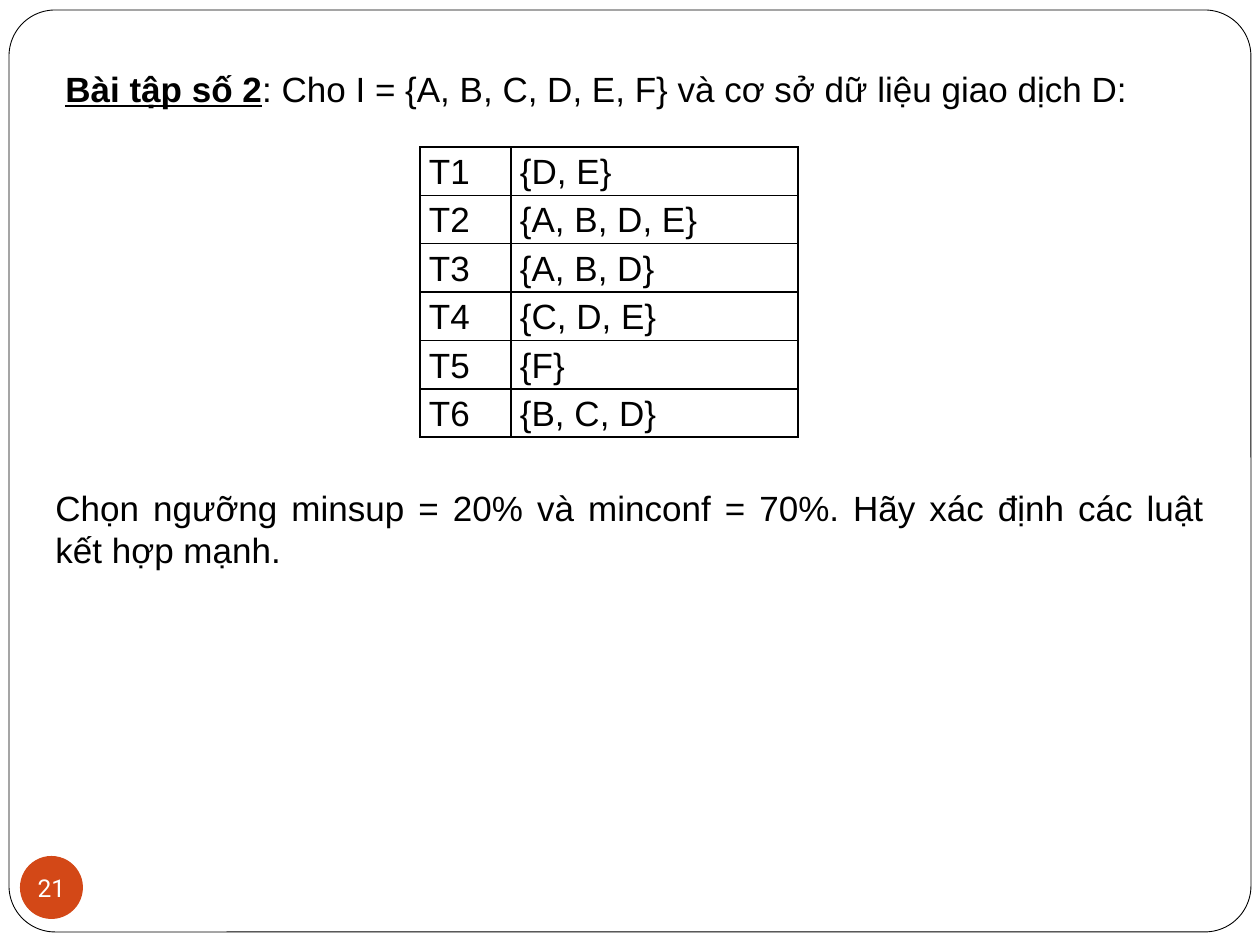
import pptx
import pptx.dml.color
import pptx.enum.shapes
import pptx.enum.text
import pptx.oxml
import pptx.oxml.ns
import pptx.util

SCALE = 914400 / 126  # EMU in one px
COLORS = {"paper": "FFFFFF", "ink": "000000", "badge": "D34817"}
ALIGN = pptx.enum.text.PP_ALIGN
SHAPE = pptx.enum.shapes.MSO_SHAPE
MIDDLE = pptx.enum.text.MSO_ANCHOR.MIDDLE

TRANSACTIONS = [
    ("T1", "{D, E}"),
    ("T2", "{A, B, D, E}"),
    ("T3", "{A, B, D}"),
    ("T4", "{C, D, E}"),
    ("T5", "{F}"),
    ("T6", "{B, C, D}"),
]


def px(length):
    return pptx.util.Emu(round(length * SCALE))


def rgb(name):
    return pptx.dml.color.RGBColor.from_string(COLORS[name])


def set_font(paragraph, size=20, name="Arial", color="ink"):
    font = paragraph.font
    font.size = pptx.util.Pt(size)
    font.name = name
    font.color.rgb = rgb(color)


def add_plain_shape(slide, kind, box, fill):
    shape = slide.shapes.add_shape(kind, *map(px, box))
    shape.shadow.inherit = False
    shape.fill.solid()
    shape.fill.fore_color.rgb = rgb(fill)
    return shape


def add_frame(slide, box):
    frame = add_plain_shape(slide, SHAPE.ROUNDED_RECTANGLE, box, "paper")
    frame.adjustments[0] = 0.05
    frame.line.color.rgb = rgb("ink")
    frame.line.width = pptx.util.Pt(0.5)


def add_page_badge(slide, box, number):
    badge = add_plain_shape(slide, SHAPE.OVAL, box, "badge")
    badge.line.fill.background()
    text = badge.text_frame
    text.margin_left = text.margin_right = text.margin_top = text.margin_bottom = 0
    text.word_wrap = False
    text.vertical_anchor = MIDDLE
    label = text.paragraphs[0]
    label.text = number
    label.alignment = ALIGN.CENTER
    set_font(label, 14, "Roboto", "paper")


def add_statement(slide, box, body, heading=""):
    text = slide.shapes.add_textbox(*map(px, box)).text_frame
    text.word_wrap = True
    text.vertical_anchor = MIDDLE
    statement = text.paragraphs[0]
    statement.alignment = ALIGN.JUSTIFY
    set_font(statement)
    if heading:
        title = statement.add_run()
        title.text = heading
        title.font.bold = title.font.underline = True
    statement.add_run().text = body


def add_borders(cell):
    properties = cell._tc.get_or_add_tcPr()
    for position, side in enumerate(("lnL", "lnR", "lnT", "lnB")):
        border = pptx.oxml.parse_xml(
            f'<a:{side} {pptx.oxml.ns.nsdecls("a")} w="12700"><a:solidFill>'
            f'<a:srgbClr val="{COLORS["ink"]}"/></a:solidFill></a:{side}>'
        )
        properties.insert(position, border)


def add_transactions(slide, box, id_width):
    left, top, width, height = box
    table = slide.shapes.add_table(len(TRANSACTIONS), 2, *map(px, box)).table
    table.first_row = table.horz_banding = False
    table.columns[0].width = px(id_width)
    table.columns[1].width = px(width - id_width)
    for row, values in enumerate(TRANSACTIONS):
        table.rows[row].height = px(height / len(TRANSACTIONS))
        for column, value in enumerate(values):
            cell = table.cell(row, column)
            cell.fill.background()
            cell.margin_left = cell.margin_right = px(9)
            cell.margin_top = cell.margin_bottom = 0
            entry = cell.text_frame.paragraphs[0]
            entry.text = value
            entry.line_spacing = 1.15
            set_font(entry)
            add_borders(cell)


def add_exercise_slide(deck):
    slide = deck.slides.add_slide(deck.slide_layouts[6])
    # Page frame and number
    add_frame(slide, (9, 10, 1242, 922))
    add_page_badge(slide, (20, 856, 63, 63), "21")
    # Exercise, its data and the question
    add_statement(
        slide, (53, 61, 1104, 55),
        ": Cho I = {A, B, C, D, E, F} và cơ sở dữ liệu giao dịch D:",
        heading="Bài tập số 2",
    )
    add_transactions(slide, (420, 147, 378, 290), id_width=91)
    add_statement(
        slide, (43, 480, 1174, 97),
        "Chọn ngưỡng minsup = 20% và minconf = 70%. "
        "Hãy xác định các luật kết hợp mạnh.",
    )


def main():
    deck = pptx.Presentation()
    deck.slide_width, deck.slide_height = px(1260), px(945)
    add_exercise_slide(deck)
    deck.save("out.pptx")


if __name__ == "__main__":
    main()
